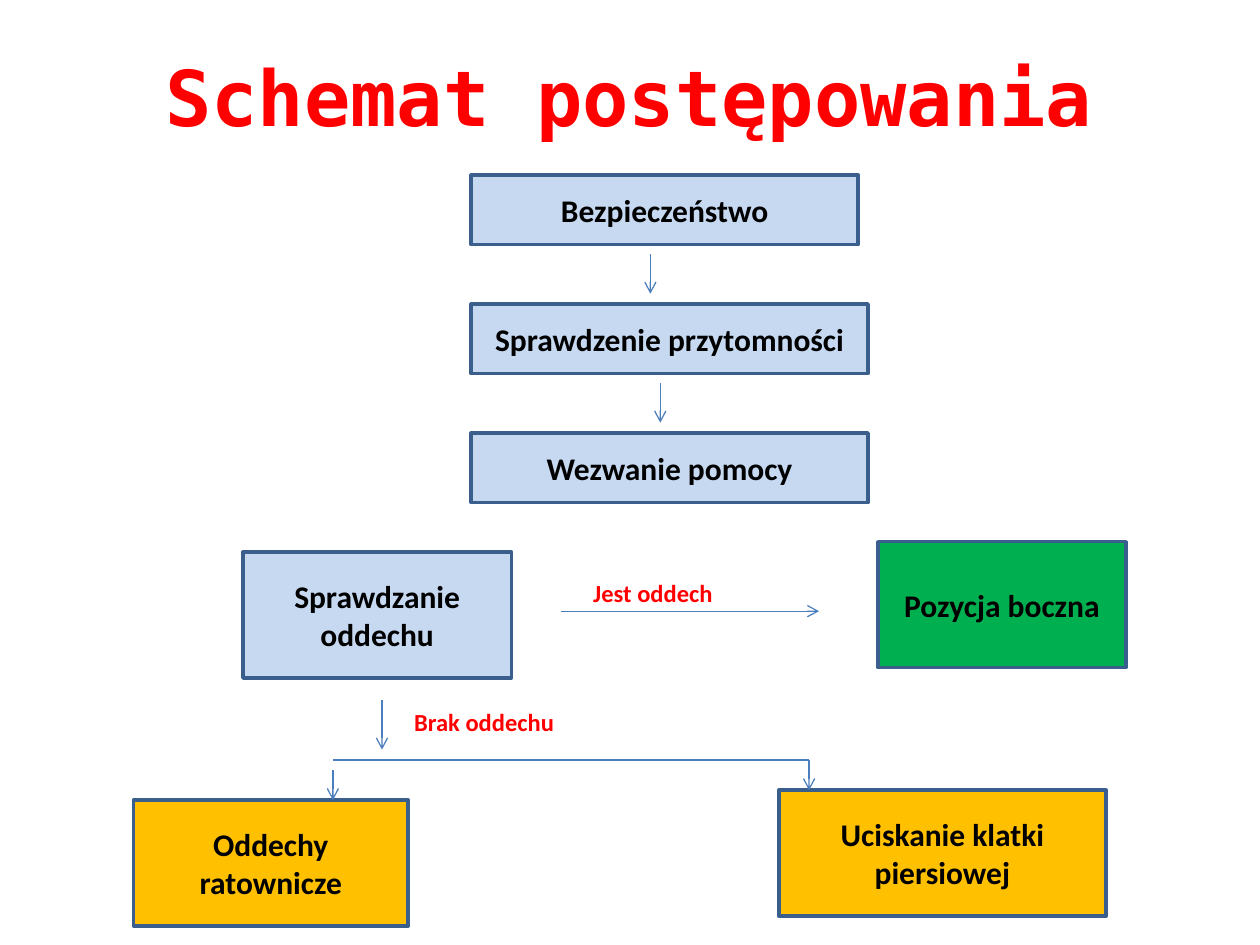
"""Build the first-aid procedure flowchart slide."""
from dataclasses import dataclass

from lxml import etree
from pptx import Presentation
from pptx import util as u
from pptx.dml.color import RGBColor
from pptx.enum import shapes, text
from pptx.oxml.ns import qn

BLACK = RGBColor(0x00, 0x00, 0x00)
RED = RGBColor(0xFF, 0x00, 0x00)
PALE_BLUE = RGBColor(0xC6, 0xD9, 0xF1)
GREEN = RGBColor(0x00, 0xB0, 0x50)
AMBER = RGBColor(0xFF, 0xC0, 0x00)
BORDER = RGBColor(0x3A, 0x5F, 0x8C)
ARROW = RGBColor(0x4B, 0x7E, 0xBC)

STEP_LEFT, STEP_TOP, STEP_PITCH, STEP_HEIGHT = 9.5, 3.53, 2.6, 1.4
TALL = 2.54
BRANCH_LEFT, BRANCH_RIGHT, BRANCH_TOP = 6.71, 16.31, 15.32


@dataclass(frozen=True)
class Box:
    wording: str
    left: float
    top: float
    width: float
    height: float = TALL
    fill: RGBColor = PALE_BLUE


@dataclass(frozen=True)
class Line:
    start: tuple[float, float]
    end: tuple[float, float]
    arrow: bool = True


@dataclass(frozen=True)
class Label:
    wording: str
    left: float
    top: float
    width: float
    height: float = 0.86
    size: int = 14
    font: str = "Calibri"
    align: text.PP_ALIGN = text.PP_ALIGN.LEFT
    anchor: text.MSO_ANCHOR = text.MSO_ANCHOR.TOP


STEPS = [("Bezpieczeństwo", 7.8), ("Sprawdzenie przytomności", 8), ("Wezwanie pomocy", 8)]
BOXES = [
    Box(wording, STEP_LEFT, STEP_TOP + row * STEP_PITCH, width, STEP_HEIGHT)
    for row, (wording, width) in enumerate(STEPS)
] + [
    Box("Sprawdzanie oddechu", 4.9, 11.13, 5.41),
    Box("Pozycja boczna", 17.7, 10.92, 5, fill=GREEN),
    Box("Oddechy ratownicze", 2.69, 16.13, 5.54, fill=AMBER),
    Box("Uciskanie klatki piersiowej", 15.7, 15.93, 6.6, fill=AMBER),
]
LINES = [
    Line((13.11, 5.13), (13.11, 5.92)),
    Line((13.31, 7.73), (13.31, 8.52)),
    Line((11.3, 12.32), (16.51, 12.32)),
    Line((7.7, 14.12), (7.7, 15.11)),
    Line((BRANCH_LEFT, BRANCH_TOP), (BRANCH_RIGHT, BRANCH_TOP), arrow=False),
    Line((BRANCH_LEFT, 15.52), (BRANCH_LEFT, 16.13)),
    Line((BRANCH_RIGHT, BRANCH_TOP), (BRANCH_RIGHT, 15.93)),
]
LABELS = [
    Label("Schemat postępowania", 1.27, 0.76, 22.83, 2.36, 44, "DejaVu Sans Mono",
          text.PP_ALIGN.CENTER, text.MSO_ANCHOR.MIDDLE),
    Label("Jest oddech", 11.71, 11.53, 4.19),
    Label("Brak oddechu", 8.1, 14.12, 3.99),
]


def write(frame, wording: str, size: int, font: str, color: RGBColor,
          align: text.PP_ALIGN, anchor: text.MSO_ANCHOR) -> None:
    frame.word_wrap = True
    frame.vertical_anchor = anchor
    paragraph = frame.paragraphs[0]
    paragraph.alignment = align
    run = paragraph.add_run()
    run.text = wording
    run.font.name = font
    run.font.size = u.Pt(size)
    run.font.bold = True
    run.font.color.rgb = color


def draw_box(slide, box: Box) -> None:
    shape = slide.shapes.add_shape(
        shapes.MSO_SHAPE.RECTANGLE,
        u.Cm(box.left), u.Cm(box.top), u.Cm(box.width), u.Cm(box.height))
    shape.shadow.inherit = False
    shape.fill.solid()
    shape.fill.fore_color.rgb = box.fill
    shape.line.color.rgb = BORDER
    shape.line.width = u.Pt(2)
    write(shape.text_frame, box.wording, 18, "Calibri", BLACK,
          text.PP_ALIGN.CENTER, text.MSO_ANCHOR.MIDDLE)


def draw_line(slide, line: Line) -> None:
    connector = slide.shapes.add_connector(
        shapes.MSO_CONNECTOR.STRAIGHT,
        *(u.Cm(length) for length in line.start + line.end))
    connector.line.color.rgb = ARROW
    connector.line.width = u.Pt(0.75)
    properties = connector.element.spPr
    if line.arrow:
        etree.SubElement(properties.find(qn("a:ln")), qn("a:tailEnd"), type="arrow")
    etree.SubElement(properties, qn("a:effectLst"))


def draw_label(slide, label: Label) -> None:
    shape = slide.shapes.add_textbox(
        u.Cm(label.left), u.Cm(label.top), u.Cm(label.width), u.Cm(label.height))
    write(shape.text_frame, label.wording, label.size, label.font, RED,
          label.align, label.anchor)


def main() -> None:
    presentation = Presentation()
    presentation.slide_width = u.Cm(25.4)
    presentation.slide_height = u.Cm(19.05)
    slide = presentation.slides.add_slide(presentation.slide_layouts[6])
    for box in BOXES:
        draw_box(slide, box)
    for line in LINES:
        draw_line(slide, line)
    for label in LABELS:
        draw_label(slide, label)
    presentation.save("out.pptx")


if __name__ == "__main__":
    main()
